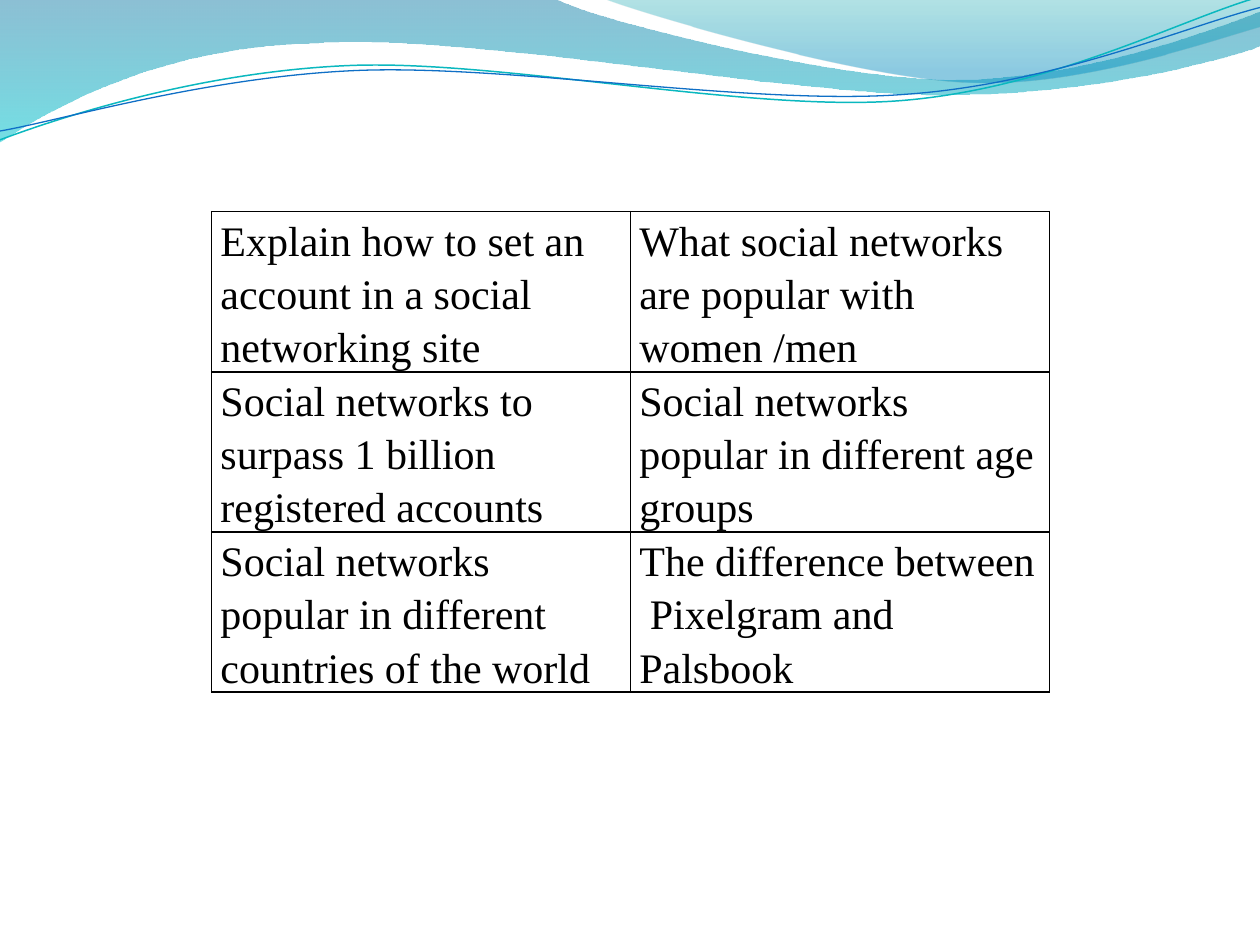
from math import cos, radians, sin

from lxml import etree
from pptx import Presentation
from pptx.dml.color import RGBColor
from pptx.oxml.ns import qn
from pptx.util import Inches, Pt

BLANK_LAYOUT = 6
FONT = "Times New Roman"
COLORS = {"text": "000000", "border": "000000", "teal": "0AB8BF", "blue": "0F6FC6",
          "deep": "0074A1", "aqua": "00C6CF", "sea": "00A1A9", "sky": "008BBF"}

TOPICS = [
    ("Explain how to set an account in a social networking site",
     "What social networks are popular with women /men"),
    ("Social networks to surpass 1 billion registered accounts",
     "Social networks popular in different age groups"),
    ("Social networks popular in different countries of the world",
     "The difference between  Pixelgram and Palsbook"),
]
TABLE_LEFT, TABLE_TOP, COL_WIDTH, ROW_HEIGHT = 1.68, 1.68, 3.325, 1.27

# Outlines in inches: a pair is a straight step, six numbers are a Bezier curve.
# Gradient stops are (position, colour, opacity in percent), from top to bottom.
BANDS = [
    {"outline": [(0, 0), (4.4, -0.01), (4.76, 0.17, 6.64, 0.63, 7.58, 0.63),
                 (8.53, 0.63, 9.58, 0.26, 10, 0.09), (10.01, 0.36),
                 (9.83, 0.44, 8.7, 0.76, 7.46, 0.75),
                 (6.22, 0.75, 3.82, 0.28, 2.57, 0.34),
                 (1.29, 0.36, 0.46, 0.83, -0.01, 1.13), (0, 0)],
     "stops": [(0, "deep", 45), (1, "aqua", 55)]},
    {"outline": [(4.79, -0.01), (5.09, 0.11, 6.82, 0.62, 7.69, 0.65),
                 (8.56, 0.69, 9.61, 0.32, 10, 0.21), (10, 0), (4.79, -0.01)],
     "stops": [(0, "sea", 30), (0.8, "sky", 45)]},
]
# Waves are drawn where they show and tilted about their centre.
WAVE_TILT = -2.7
WAVES = [
    {"outline": [(0, 1.11), (0.48, 0.93, 1.58, 0.57, 2.77, 0.52),
                 (3.95, 0.47, 5.93, 0.89, 7.13, 0.8),
                 (8.33, 0.71, 9.38, 0.15, 9.98, -0.02)],
     "center": (4.99, 0.575), "color": "teal", "width": 0.85},
    {"outline": [(0, 1.04), (0.47, 0.96, 1.64, 0.61, 2.83, 0.56),
                 (4.03, 0.51, 5.97, 0.84, 7.17, 0.75),
                 (8.36, 0.67, 9.41, 0.21, 10, 0.06)],
     "center": (5, 0.59), "color": "blue", "width": 0.75},
]


def rgb(name):
    return RGBColor.from_string(COLORS[name])


def turn(step, center, degrees):
    """Rotate every point of a step clockwise about the centre."""
    a = radians(degrees)
    turned = []
    for x, y in zip(step[::2], step[1::2]):
        dx, dy = x - center[0], y - center[1]
        turned += [center[0] + dx * cos(a) - dy * sin(a),
                   center[1] + dx * sin(a) + dy * cos(a)]
    return tuple(turned)


def add_outline(s, outline, close):
    """Add a freeform, then join each curve's three points into one Bezier."""
    start, *points = [(Inches(x), Inches(y)) for step in outline
                      for x, y in zip(step[::2], step[1::2])]
    builder = s.shapes.build_freeform(*start)
    builder.add_line_segments(points, close=close)
    sp = builder.convert_to_shape()
    sp.shadow.inherit = False
    segments = iter(sp.element.findall(".//" + qn("a:lnTo")))
    for step in outline[1:]:
        first = next(segments)
        if len(step) == 6:
            first.tag = qn("a:cubicBezTo")
            for _ in range(2):
                segment = next(segments)
                first.append(segment[0])
                segment.getparent().remove(segment)
    return sp


def add_band(s, outline, stops):
    sp = add_outline(s, outline, close=True)
    sp.line.fill.background()
    sp.fill.gradient()
    sp.fill.gradient_angle = 270
    for stop, (position, color, _) in zip(sp.fill.gradient_stops, stops):
        stop.position = position
        stop.color.rgb = rgb(color)
    clrs = sp.element.spPr.findall(".//" + qn("a:srgbClr"))
    for clr, (_, _, opacity) in zip(clrs, stops):
        etree.SubElement(clr, qn("a:alpha"), val=str(opacity * 1000))


def add_wave(s, outline, center, color, width):
    level = [turn(step, center, -WAVE_TILT) for step in outline]
    sp = add_outline(s, level, close=False)
    sp.rotation = WAVE_TILT
    sp.fill.background()
    sp.line.color.rgb = rgb(color)
    sp.line.width = Pt(width)


def add_borders(cell):
    tcPr = cell._tc.get_or_add_tcPr()
    for side in ("lnL", "lnR", "lnT", "lnB"):
        ln = etree.SubElement(tcPr, qn("a:" + side), w=str(Pt(1)))
        fill = etree.SubElement(ln, qn("a:solidFill"))
        etree.SubElement(fill, qn("a:srgbClr"), val=COLORS["border"])


def format_cell(cell, text):
    add_borders(cell)
    cell.fill.background()
    cell.margin_left = cell.margin_right = Inches(0.07)
    cell.margin_top = cell.margin_bottom = 0
    cell.text = text
    p = cell.text_frame.paragraphs[0]
    p.line_spacing = 1.15
    p.font.name = FONT
    p.font.size = Pt(24)
    p.font.color.rgb = rgb("text")


def add_topics(s):
    rows, cols = len(TOPICS), len(TOPICS[0])
    table = s.shapes.add_table(rows, cols, Inches(TABLE_LEFT), Inches(TABLE_TOP),
                               Inches(cols * COL_WIDTH), Inches(rows * ROW_HEIGHT)).table
    table.first_row = table.horz_banding = False
    for r, topics in enumerate(TOPICS):
        for c, topic in enumerate(topics):
            format_cell(table.cell(r, c), topic)


def main():
    prs = Presentation()
    prs.slide_width, prs.slide_height = Inches(10), Inches(7.5)
    s = prs.slides.add_slide(prs.slide_layouts[BLANK_LAYOUT])

    # Wavy header
    for band in BANDS:
        add_band(s, **band)
    for wave in WAVES:
        add_wave(s, **wave)

    # Topic table
    add_topics(s)
    prs.save("out.pptx")


if __name__ == "__main__":
    main()
